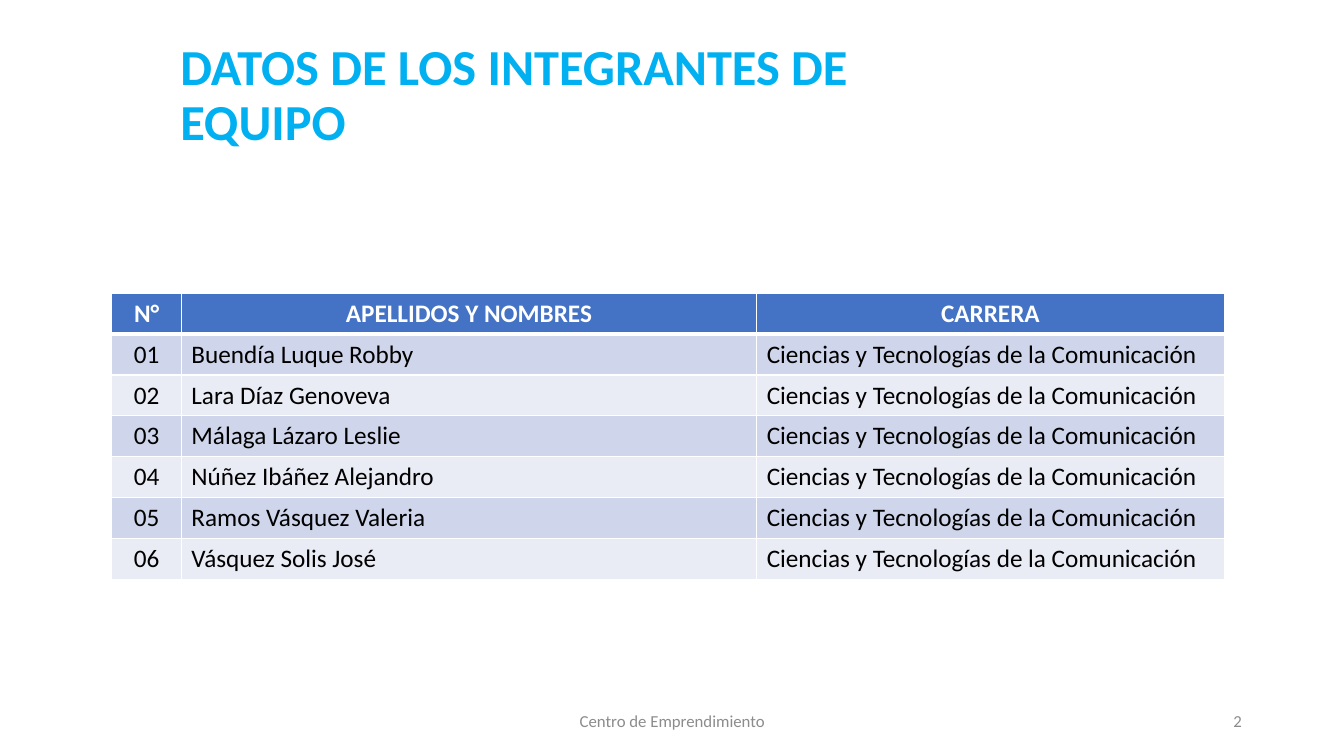
from dataclasses import dataclass

from lxml import etree
from pptx import Presentation
from pptx import util as u
from pptx.dml.color import RGBColor
from pptx.enum import text
from pptx.oxml import ns

FONT = "Calibri"
COLORS = {
    "title": "00B0F0",
    "header": "4472C4",
    "odd_row": "CFD5EA",
    "even_row": "E9EBF5",
    "white": "FFFFFF",
    "black": "000000",
    "footer": "8C8C8C",
}
LEFT, CENTER, RIGHT = text.PP_ALIGN.LEFT, text.PP_ALIGN.CENTER, text.PP_ALIGN.RIGHT

HEADINGS = ["N°", "APELLIDOS Y NOMBRES", "CARRERA"]
MEMBERS = [
    "Buendía Luque Robby",
    "Lara Díaz Genoveva",
    "Málaga Lázaro Leslie",
    "Núñez Ibáñez Alejandro",
    "Ramos Vásquez Valeria",
    "Vásquez Solis José",
]
CAREER = "Ciencias y Tecnologías de la Comunicación"
COLUMN_WIDTHS = [1.75, 14.5, 11.78]
ROW_HEIGHT = 1.03


@dataclass
class Style:
    size: float
    color: str
    bold: bool = False
    align: text.PP_ALIGN = LEFT


@dataclass
class FooterItem:
    words: str
    left: float
    width: float
    align: text.PP_ALIGN


FOOTER = [
    FooterItem("Centro de Emprendimiento", 11.23, 11.43, CENTER),
    FooterItem("2", 23.93, 7.62, RIGHT),
]


def write(para, words: str, style: Style) -> None:
    para.alignment = style.align
    span = para.add_run()
    span.text = words
    span.font.name = FONT
    span.font.size = u.Pt(style.size)
    span.font.bold = style.bold
    span.font.color.rgb = RGBColor.from_string(COLORS[style.color])


def add_title(page) -> None:
    box = page.shapes.title
    box.left, box.top = u.Cm(4.29), u.Cm(1.52)
    box.width, box.height = u.Cm(21.41), u.Cm(1.83)
    frame = box.text_frame
    frame.word_wrap = True
    frame.auto_size = text.MSO_AUTO_SIZE.NONE
    frame.vertical_anchor = text.MSO_ANCHOR.MIDDLE
    para = frame.paragraphs[0]
    para.line_spacing = 0.9
    write(para, "DATOS DE LOS INTEGRANTES DE EQUIPO", Style(36, "title", True))


def set_borders(cell, top: float, bottom: float) -> None:
    """Draw white cell borders: 1 pt at the sides, the given points elsewhere."""
    properties = cell._tc.get_or_add_tcPr()
    for side, points in {"L": 1, "R": 1, "T": top, "B": bottom}.items():
        line = etree.SubElement(properties, ns.qn(f"a:ln{side}"), w=str(u.Pt(points)))
        fill = etree.SubElement(line, ns.qn("a:solidFill"))
        etree.SubElement(fill, ns.qn("a:srgbClr"), val=COLORS["white"])


def add_members_table(page) -> None:
    rows = [HEADINGS]
    rows += [[f"{number:02}", name, CAREER] for number, name in enumerate(MEMBERS, 1)]
    table = page.shapes.add_table(
        len(rows), len(HEADINGS), u.Cm(2.82), u.Cm(7.39),
        u.Cm(sum(COLUMN_WIDTHS)), u.Cm(ROW_HEIGHT * len(rows)),
    ).table
    for column, width in zip(table.columns, COLUMN_WIDTHS):
        column.width = u.Cm(width)
    for r, values in enumerate(rows):
        table.rows[r].height = u.Cm(ROW_HEIGHT)
        is_header = r == 0
        fill = "header" if is_header else "odd_row" if r % 2 else "even_row"
        for c, value in enumerate(values):
            cell = table.cell(r, c)
            set_borders(cell, top=3 if r == 1 else 1, bottom=3 if is_header else 1)
            cell.fill.solid()
            cell.fill.fore_color.rgb = RGBColor.from_string(COLORS[fill])
            align = CENTER if is_header or c == 0 else LEFT
            color = "white" if is_header else "black"
            write(cell.text_frame.paragraphs[0], value, Style(18, color, is_header, align))


def add_footer_item(page, item: FooterItem) -> None:
    box = page.shapes.add_textbox(u.Cm(item.left), u.Cm(17.65), u.Cm(item.width), u.Cm(1.02))
    box.text_frame.word_wrap = True
    box.text_frame.vertical_anchor = text.MSO_ANCHOR.MIDDLE
    write(box.text_frame.paragraphs[0], item.words, Style(12, "footer", align=item.align))


def main() -> None:
    deck = Presentation()
    deck.slide_width, deck.slide_height = u.Cm(33.87), u.Cm(19.05)
    page = deck.slides.add_slide(deck.slide_layouts.get_by_name("Title Only"))
    add_title(page)
    add_members_table(page)
    for item in FOOTER:
        add_footer_item(page, item)
    deck.save("out.pptx")


if __name__ == "__main__":
    main()
